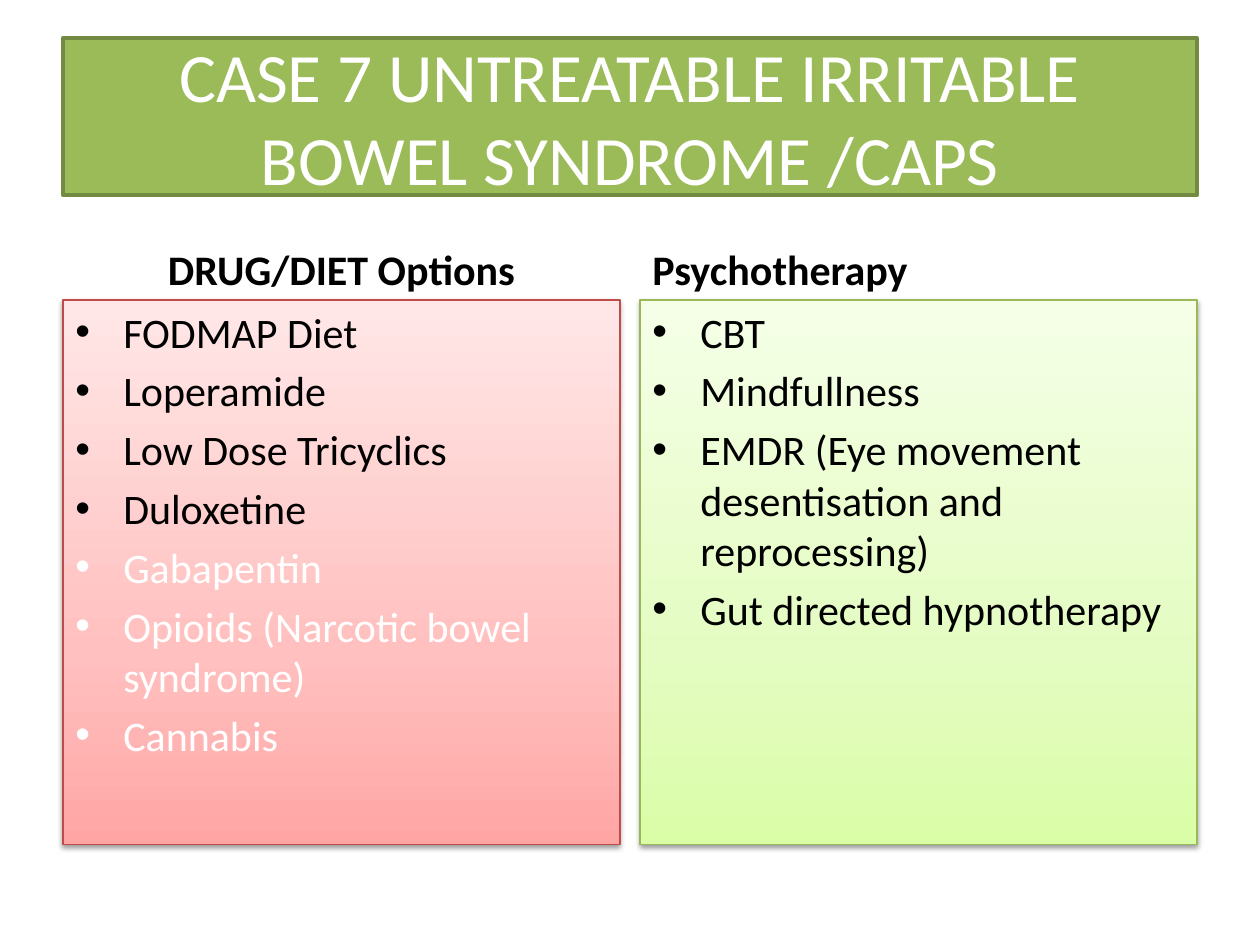
from lxml.etree import SubElement
from pptx import Presentation
from pptx.dml.color import RGBColor
from pptx.enum.shapes import MSO_SHAPE as Shape
from pptx.enum.text import MSO_ANCHOR as Anchor, PP_ALIGN as Align
from pptx.oxml import parse_xml
from pptx.oxml.ns import nsdecls, qn
from pptx.util import Inches, Pt

TITLE = "CASE 7 UNTREATABLE IRRITABLE BOWEL SYNDROME /CAPS"
COLUMNS = [
    {
        "heading": "DRUG/DIET Options",
        "align": Align.CENTER,
        "style": "red",
        "items": ["FODMAP Diet", "Loperamide", "Low Dose Tricyclics", "Duloxetine"],
        "pale_items": ["Gabapentin", "Opioids (Narcotic bowel syndrome)", "Cannabis"],
    },
    {
        "heading": "Psychotherapy",
        "align": Align.LEFT,
        "style": "green",
        "items": [
            "CBT",
            "Mindfullness",
            "EMDR (Eye movement desentisation and reprocessing)",
            "Gut directed hypnotherapy",
        ],
        "pale_items": [],
    },
]
THEME = {
    "font": "Calibri",
    "title_size": 39.6,
    "body_size": 24,
    "dark": "000000",
    "light": "FFFFFF",
    "title_fill": "9BBB59",
    "title_line": "738A42",
    # Gradient stops run from the bottom of a panel to its top.
    "red": {"line": "BF4C48", "stops": [(0, "FFA6A5"), (35, "FFC0BF"), (100, "FFE7E7")]},
    "green": {"line": "98B955", "stops": [(0, "DAFDA7"), (35, "E4FCC2"), (100, "F5FFE7")]},
}
SLIDE_WIDTH, SLIDE_HEIGHT, MARGIN = 10, 7.5, 0.5
TITLE_TOP, TITLE_HEIGHT = 0.3, 1.25
HEADING_TOP, HEADING_HEIGHT = 1.68, 0.7
PANEL_HEIGHT = 4.32
COLUMN_WIDTH = 4.42
CONTENT_WIDTH = SLIDE_WIDTH - 2 * MARGIN
COLUMN_GAP = CONTENT_WIDTH - 2 * COLUMN_WIDTH
INDENT = Inches(0.38)


def color(name):
    return RGBColor.from_string(THEME[name])


def write_paragraph(paragraph, text, size, color_name, align=Align.LEFT, bold=False):
    paragraph.text = text
    paragraph.alignment = align
    font = paragraph.runs[0].font
    font.name, font.size, font.bold = THEME["font"], Pt(size), bold
    font.color.rgb = color(color_name)


def add_bullet(paragraph, color_name):
    properties = paragraph._p.get_or_add_pPr()
    properties.set("marL", str(INDENT))
    properties.set("indent", str(-INDENT))
    bullet_color = SubElement(properties, qn("a:buClr"))
    SubElement(bullet_color, qn("a:srgbClr"), val=THEME[color_name])
    SubElement(properties, qn("a:buFont"), typeface="Arial")
    SubElement(properties, qn("a:buChar"), char="•")


def add_rectangle(slide, left, top, width, height, anchor):
    shape = slide.shapes.add_shape(
        Shape.RECTANGLE, Inches(left), Inches(top), Inches(width), Inches(height))
    shape.shadow.inherit = False
    shape.text_frame.word_wrap = True
    shape.text_frame.vertical_anchor = anchor
    return shape


def add_title(slide):
    shape = add_rectangle(
        slide, MARGIN, TITLE_TOP, CONTENT_WIDTH, TITLE_HEIGHT, Anchor.MIDDLE)
    shape.fill.solid()
    shape.fill.fore_color.rgb = color("title_fill")
    shape.line.color.rgb = color("title_line")
    shape.line.width = Pt(2)
    write_paragraph(shape.text_frame.paragraphs[0], TITLE,
                    THEME["title_size"], "light", Align.CENTER)


def add_heading(slide, left, column):
    box = slide.shapes.add_textbox(
        Inches(left), Inches(HEADING_TOP), Inches(COLUMN_WIDTH), Inches(HEADING_HEIGHT))
    frame = box.text_frame
    frame.word_wrap = True
    frame.vertical_anchor = Anchor.BOTTOM
    write_paragraph(frame.paragraphs[0], column["heading"], THEME["body_size"],
                    "dark", column["align"], bold=True)


def style_panel(shape, style):
    """Give a panel its upward gradient, thin outline and soft shadow."""
    shape.fill.gradient()
    shape.fill.gradient_angle = 90
    stop_list = shape._element.spPr.find(f".//{qn('a:gsLst')}")
    for stop in list(stop_list):
        stop_list.remove(stop)
    for position, value in style["stops"]:
        stop = SubElement(stop_list, qn("a:gs"), pos=str(position * 1000))
        SubElement(stop, qn("a:srgbClr"), val=value)
    shape.line.color.rgb = RGBColor.from_string(style["line"])
    shape.line.width = Pt(0.75)
    shape._element.spPr.find(qn("a:effectLst")).append(parse_xml(
        f'<a:outerShdw {nsdecls("a")} blurRad="{Pt(3.1)}" dist="{Pt(1.6)}" '
        'dir="5400000" rotWithShape="0"><a:srgbClr val="000000">'
        '<a:alpha val="38000"/></a:srgbClr></a:outerShdw>'))


def add_panel(slide, left, column):
    shape = add_rectangle(slide, left, HEADING_TOP + HEADING_HEIGHT,
                          COLUMN_WIDTH, PANEL_HEIGHT, Anchor.TOP)
    style_panel(shape, THEME[column["style"]])
    frame = shape.text_frame
    entries = [(text, "dark") for text in column["items"]]
    entries += [(text, "light") for text in column["pale_items"]]
    for index, (text, color_name) in enumerate(entries):
        paragraph = frame.add_paragraph() if index else frame.paragraphs[0]
        write_paragraph(paragraph, text, THEME["body_size"], color_name)
        paragraph.space_before = Pt(0.2 * THEME["body_size"])
        add_bullet(paragraph, color_name)


def main():
    presentation = Presentation()
    presentation.slide_width = Inches(SLIDE_WIDTH)
    presentation.slide_height = Inches(SLIDE_HEIGHT)
    slide = presentation.slides.add_slide(presentation.slide_layouts[6])
    add_title(slide)
    for index, column in enumerate(COLUMNS):
        left = MARGIN + index * (COLUMN_WIDTH + COLUMN_GAP)
        add_heading(slide, left, column)
        add_panel(slide, left, column)
    presentation.save("out.pptx")


if __name__ == "__main__":
    main()
